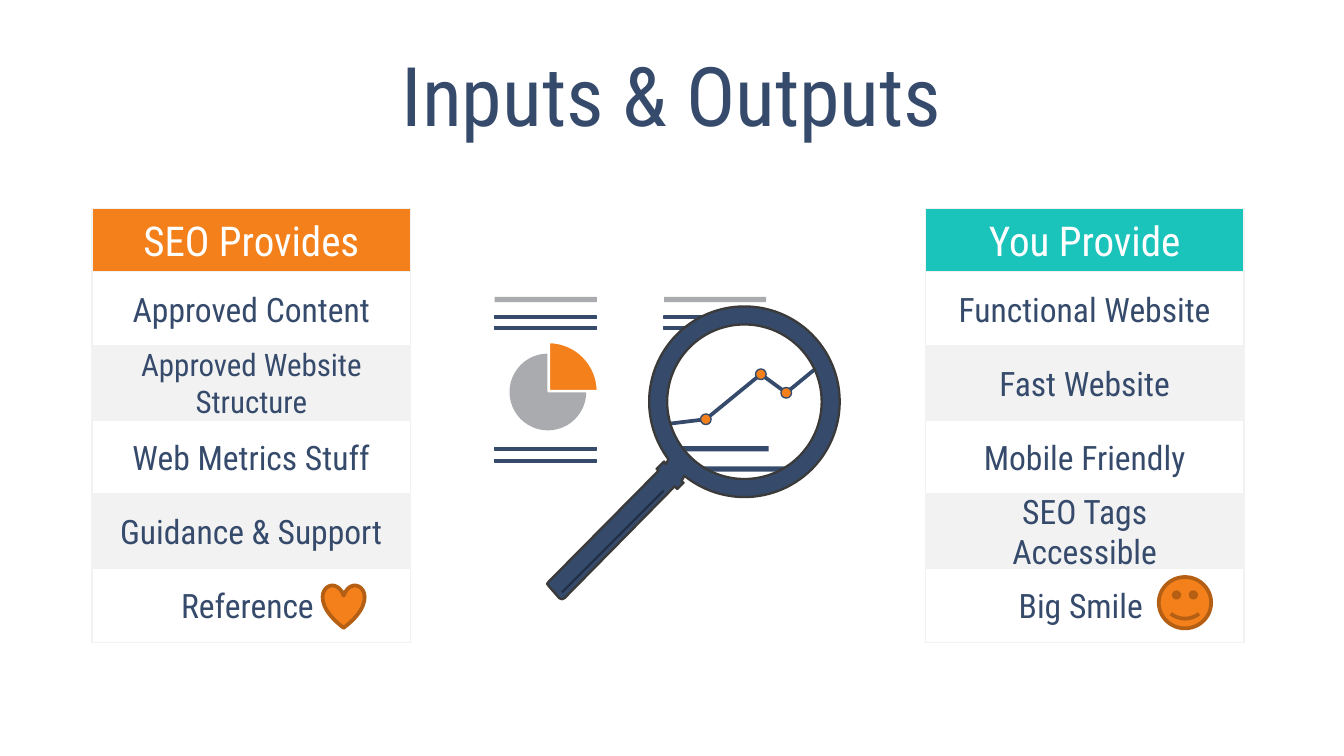
from math import cos, radians, sin

from lxml.etree import SubElement
from pptx import Presentation
from pptx.dml.color import RGBColor
from pptx.enum.shapes import MSO_CONNECTOR, MSO_SHAPE
from pptx.enum.text import MSO_ANCHOR, PP_ALIGN
from pptx.oxml.ns import qn
from pptx.util import Cm, Pt

NAVY, ORANGE, TEAL = "364B6C", "F3801A", "1BC4BB"
GREY, PALE, WHITE = "AAABAE", "F2F2F2", "FFFFFF"
BROWN, CHARCOAL, DEEP_NAVY = "B45F13", "3A3A3A", "212F47"
FONT = "Roboto Condensed"


def color(value):
    return RGBColor.from_string(value)


def paint(shape, fill=None, line=None, weight=0.75):
    shape.shadow.inherit = False
    if fill:
        shape.fill.solid()
        shape.fill.fore_color.rgb = color(fill)
    else:
        shape.fill.background()
    if line:
        shape.line.color.rgb = color(line)
        shape.line.width = Pt(weight)
    else:
        shape.line.fill.background()
    return shape


def add_part(slide, kind, box, **look):
    return paint(slide.shapes.add_shape(kind, *map(Cm, box)), **look)


def add_outline(slide, contours, closed, **look):
    builder = None
    for contour in contours:
        start, *rest = [(Cm(x), Cm(y)) for x, y in contour]
        if builder is None:
            builder = slide.shapes.build_freeform(*start, scale=1.0)
        else:
            builder.move_to(*start)
        builder.add_line_segments(rest, close=closed)
    return paint(builder.convert_to_shape(), **look)


def write(shape, text, size=18, ink=NAVY, before=0, margin=0.25):
    frame = shape.text_frame
    frame.word_wrap = True
    frame.vertical_anchor = MSO_ANCHOR.MIDDLE
    frame.margin_left = frame.margin_right = Cm(margin)
    paragraph = frame.paragraphs[0]
    paragraph.alignment = PP_ALIGN.CENTER
    paragraph.space_before = Pt(before)
    run = paragraph.add_run()
    run.text = text
    run.font.name = FONT
    run.font.size = Pt(size)
    run.font.color.rgb = color(ink)


def add_title(slide, box, text):
    write(slide.shapes.add_textbox(*map(Cm, box)), text, size=44)


def add_column(slide, box, heading, accent, items, icon, icon_box):
    left, top, width, height = box
    head_height = 1.19
    row_height = (height - head_height) / len(items)
    head = add_part(slide, MSO_SHAPE.RECTANGLE, (left, top, width, head_height), fill=accent, line=PALE)
    write(head, heading, size=22, ink=WHITE, before=4.4, margin=0.5)
    for index, (item, size) in enumerate(items):
        row_top = top + head_height + index * row_height
        row = add_part(slide, MSO_SHAPE.RECTANGLE, (left, row_top, width, row_height),
                       fill=PALE if index % 2 else WHITE, line=PALE)
        write(row, item, size=size, before=size * 0.2, margin=0.5)
    x, y, icon_width, icon_height = icon_box
    add_part(slide, icon, (left + x, top + y, icon_width, icon_height), fill=ORANGE, line=BROWN, weight=2)


def add_report(slide, box):
    left, top = box[:2]
    thin_bars = [(0, 0.36, 1.93), (0, 0.56, 1.93), (0, 2.84, 1.93), (0, 3.07, 1.93),
                 (3.2, 0.36, 0.89), (3.2, 0.56, 0.89)]
    for x, y, width in thin_bars:
        add_part(slide, MSO_SHAPE.RECTANGLE, (left + x, top + y, width, 0.05), fill=NAVY, line=NAVY)
    thick_bars = [(0, 0, 1.93, GREY), (3.2, 0, 1.93, GREY), (3.25, 2.82, 1.93, NAVY), (3.25, 3.2, 2.67, NAVY)]
    for x, y, width, fill in thick_bars:
        add_part(slide, MSO_SHAPE.RECTANGLE, (left + x, top + y, width, 0.1), fill=fill)

    add_part(slide, MSO_SHAPE.OVAL, (left + 0.28, top + 1.07, 1.45, 1.45), fill=GREY)
    slice_box = (left + 1.02, top + 0.85, 0.93, 0.93)
    pie_slice = add_part(slide, MSO_SHAPE.PIE_WEDGE, slice_box, fill=ORANGE, line=WHITE, weight=1.4)
    pie_slice.rotation = 90

    offsets = [(3.25, 2.4), (3.99, 2.31), (5.03, 1.46), (5.51, 1.81), (6.07, 1.35)]
    trend = [(left + x, top + y) for x, y in offsets]
    add_outline(slide, [trend], False, line=NAVY, weight=2)
    for x, y in trend[1:-1]:
        add_part(slide, MSO_SHAPE.OVAL, (x - 0.1, y - 0.1, 0.2, 0.2), fill=ORANGE, line=NAVY)


def arc(center, radius, start, end):
    x, y = center
    return [(x + radius * cos(radians(angle)), y + radius * sin(radians(angle)))
            for angle in range(start, end + 1, 2)]


def add_magnifier(slide, box):
    left, top = box[:2]
    center = (left + 4.72, top + 1.98)
    handle = [(3.53, 3.48), (3.57, 3.51), (3.45, 3.63), (3.4, 3.58), (1.32, 5.69), (1.27, 5.71),
              (1.22, 5.69), (1.02, 5.46), (0.99, 5.42), (1.02, 5.38), (3.1, 3.28), (3.06, 3.25),
              (3.2, 3.11), (3.24, 3.16)]
    rim = arc(center, 1.8, 143, 489) + [(left + x, top + y) for x, y in handle]
    opening = arc(center, 1.46, 0, 358)[::-1]
    add_outline(slide, [rim, opening], True, fill=NAVY, line=CHARCOAL, weight=1.25)
    ends = (left + 1.27, top + 5.58, left + 3.19, top + 3.66)
    groove = slide.shapes.add_connector(MSO_CONNECTOR.STRAIGHT, *map(Cm, ends))
    groove.line.color.rgb = color(DEEP_NAVY)
    groove.line.width = Pt(1.25)
    SubElement(groove._element.spPr, qn("a:effectLst"))


def main():
    presentation = Presentation()
    presentation.slide_width = Cm(25.4)
    presentation.slide_height = Cm(14.28)
    slide = presentation.slides.add_slide(presentation.slide_layouts[6])
    illustration = (9.35, 5.61, 6.55, 5.74)
    add_report(slide, illustration)
    add_magnifier(slide, illustration)
    add_title(slide, (1.27, 0.58, 22.86, 2.39), "Inputs & Outputs")
    add_column(slide, (1.74, 3.94, 6.02, 8.2), "SEO Provides", ORANGE,
               [("Approved Content", 18), ("Approved Website Structure", 16.6), ("Web Metrics Stuff", 18),
                ("Guidance & Support", 18), ("Reference ", 18)],
               MSO_SHAPE.HEART, (4.36, 7.11, 0.79, 0.81))
    add_column(slide, (17.49, 3.94, 6.02, 8.2), "You Provide", TEAL,
               [("Functional Website", 18), ("Fast Website", 18), ("Mobile Friendly", 18),
                ("SEO Tags Accessible", 18), ("Big Smile ", 18)],
               MSO_SHAPE.SMILEY_FACE, (4.41, 6.96, 0.99, 0.97))
    presentation.save("out.pptx")


if __name__ == "__main__":
    main()
